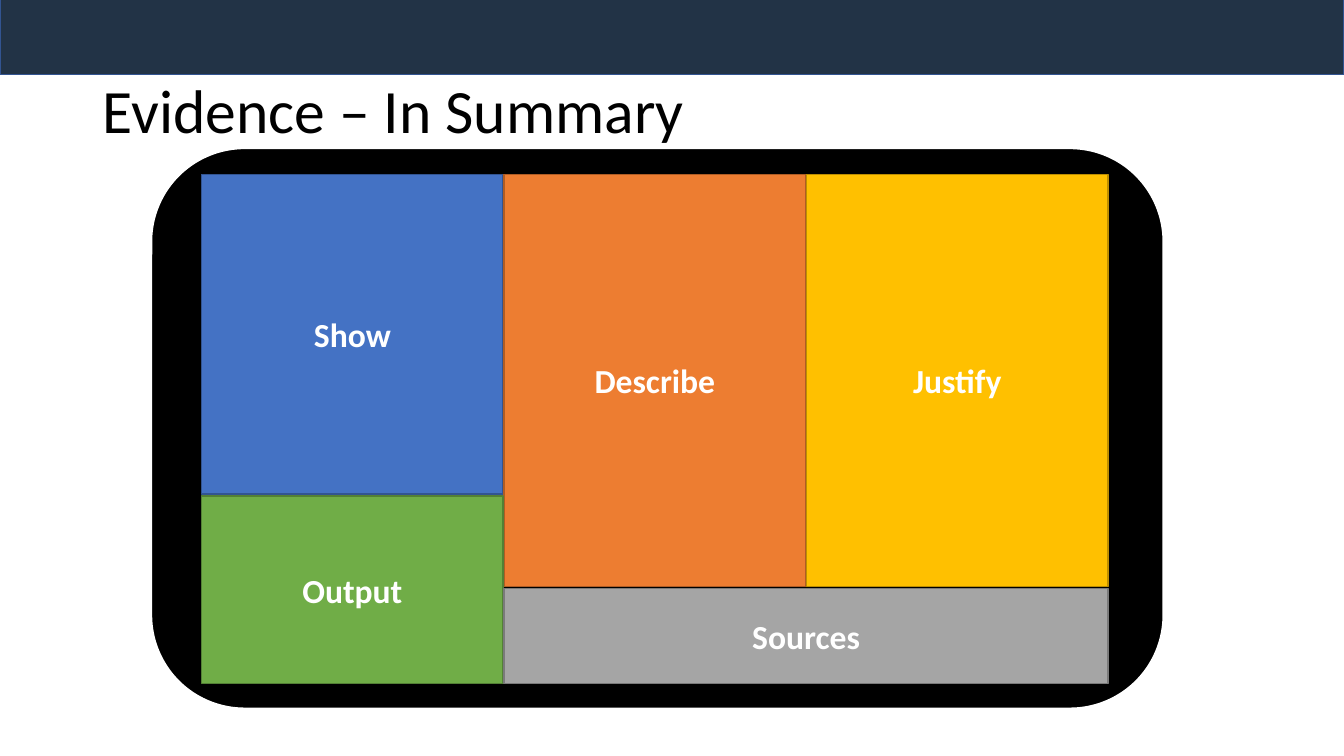
from dataclasses import dataclass

from pptx import Presentation
from pptx.dml.color import RGBColor
from pptx.enum.shapes import MSO_SHAPE as Shape
from pptx.enum.text import MSO_ANCHOR as Anchor, MSO_AUTO_SIZE as AutoSize, PP_ALIGN as Align
from pptx.shapes.autoshape import Shape as AutoShape
from pptx.slide import Slide
from pptx.text.text import TextFrame
from pptx.util import Inches, Pt


@dataclass(frozen=True)
class Theme:
    font: str = "Calibri"
    title_size: int = 44
    label_size: int = 24
    line_width: float = 1
    panel_line_width: float = 1.5
    black: str = "000000"
    white: str = "FFFFFF"
    navy: str = "223346"
    blue: str = "4472C4"
    blue_line: str = "325491"
    orange: str = "ED7D31"
    orange_line: str = "AF5C24"
    green: str = "70AD47"
    green_line: str = "538035"
    gold: str = "FFC000"
    gold_line: str = "BD8E00"
    gray: str = "A5A5A5"
    gray_line: str = "7A7A7A"


@dataclass(frozen=True)
class Box:
    left: float
    top: float
    width: float
    height: float


@dataclass(frozen=True)
class Tile:
    label: str
    column: int
    span: int
    top: float
    bottom: float
    fill: str
    line: str


THEME = Theme()
SLIDE_WIDTH, SLIDE_HEIGHT = 13.33, 7.5
BANNER = Box(0, -0.04, SLIDE_WIDTH, 0.78)
PANEL = Box(1.5, 1.47, 10.04, 5.56)
TITLE = Box(0.92, 0.4, 11.5, 1.45)

GRID_LEFT, GRID_TOP, GRID_BOTTOM = 2, 1.73, 6.78
COLUMN_STEP, COLUMN_GAP, ROW_GAP = 3, 0.01, 0.02
SHOW_BOTTOM, DESCRIBE_BOTTOM = 4.9, 5.82

TILES = (
    Tile("Show", 0, 1, GRID_TOP, SHOW_BOTTOM, THEME.blue, THEME.blue_line),
    Tile("Describe", 1, 1, GRID_TOP, DESCRIBE_BOTTOM, THEME.orange, THEME.orange_line),
    Tile("Output", 0, 1, SHOW_BOTTOM + ROW_GAP, GRID_BOTTOM, THEME.green, THEME.green_line),
    Tile("Justify", 2, 1, GRID_TOP, DESCRIBE_BOTTOM, THEME.gold, THEME.gold_line),
    Tile("Sources", 1, 2, DESCRIBE_BOTTOM + ROW_GAP, GRID_BOTTOM, THEME.gray, THEME.gray_line),
)


def add_box(slide: Slide, kind: Shape, box: Box, fill: str, line: str,
            line_width: float = THEME.line_width) -> AutoShape:
    shape = slide.shapes.add_shape(
        kind, Inches(box.left), Inches(box.top), Inches(box.width), Inches(box.height))
    shape.shadow.inherit = False
    shape.fill.solid()
    shape.fill.fore_color.rgb = RGBColor.from_string(fill)
    shape.line.color.rgb = RGBColor.from_string(line)
    shape.line.width = Pt(line_width)
    return shape


def write_text(frame: TextFrame, text: str, size: int, color: str,
               alignment: Align, bold: bool = False) -> None:
    frame.word_wrap = True
    frame.vertical_anchor = Anchor.MIDDLE
    paragraph = frame.paragraphs[0]
    paragraph.alignment = alignment
    run = paragraph.add_run()
    run.text = text
    run.font.name = THEME.font
    run.font.size = Pt(size)
    run.font.bold = bold
    run.font.color.rgb = RGBColor.from_string(color)


def add_title(slide: Slide, text: str) -> None:
    title = slide.shapes.title
    title.left, title.top = Inches(TITLE.left), Inches(TITLE.top)
    title.width, title.height = Inches(TITLE.width), Inches(TITLE.height)
    write_text(title.text_frame, text, THEME.title_size, THEME.black, Align.LEFT)
    title.text_frame.auto_size = AutoSize.NONE
    title.text_frame.paragraphs[0].line_spacing = 0.9


def add_tile(slide: Slide, tile: Tile) -> None:
    box = Box(
        GRID_LEFT + tile.column * COLUMN_STEP,
        tile.top,
        tile.span * COLUMN_STEP - COLUMN_GAP,
        tile.bottom - tile.top,
    )
    shape = add_box(slide, Shape.RECTANGLE, box, tile.fill, tile.line)
    write_text(shape.text_frame, tile.label, THEME.label_size, THEME.white, Align.CENTER, True)


def main() -> None:
    presentation = Presentation()
    presentation.slide_width = Inches(SLIDE_WIDTH)
    presentation.slide_height = Inches(SLIDE_HEIGHT)
    slide = presentation.slides.add_slide(presentation.slide_layouts.get_by_name("Title Only"))
    add_title(slide, "Evidence – In Summary")
    add_box(slide, Shape.RECTANGLE, BANNER, THEME.navy, THEME.blue_line)
    add_box(slide, Shape.ROUNDED_RECTANGLE, PANEL, THEME.black, THEME.white,
            THEME.panel_line_width)
    for tile in TILES:
        add_tile(slide, tile)
    presentation.save("out.pptx")


if __name__ == "__main__":
    main()
